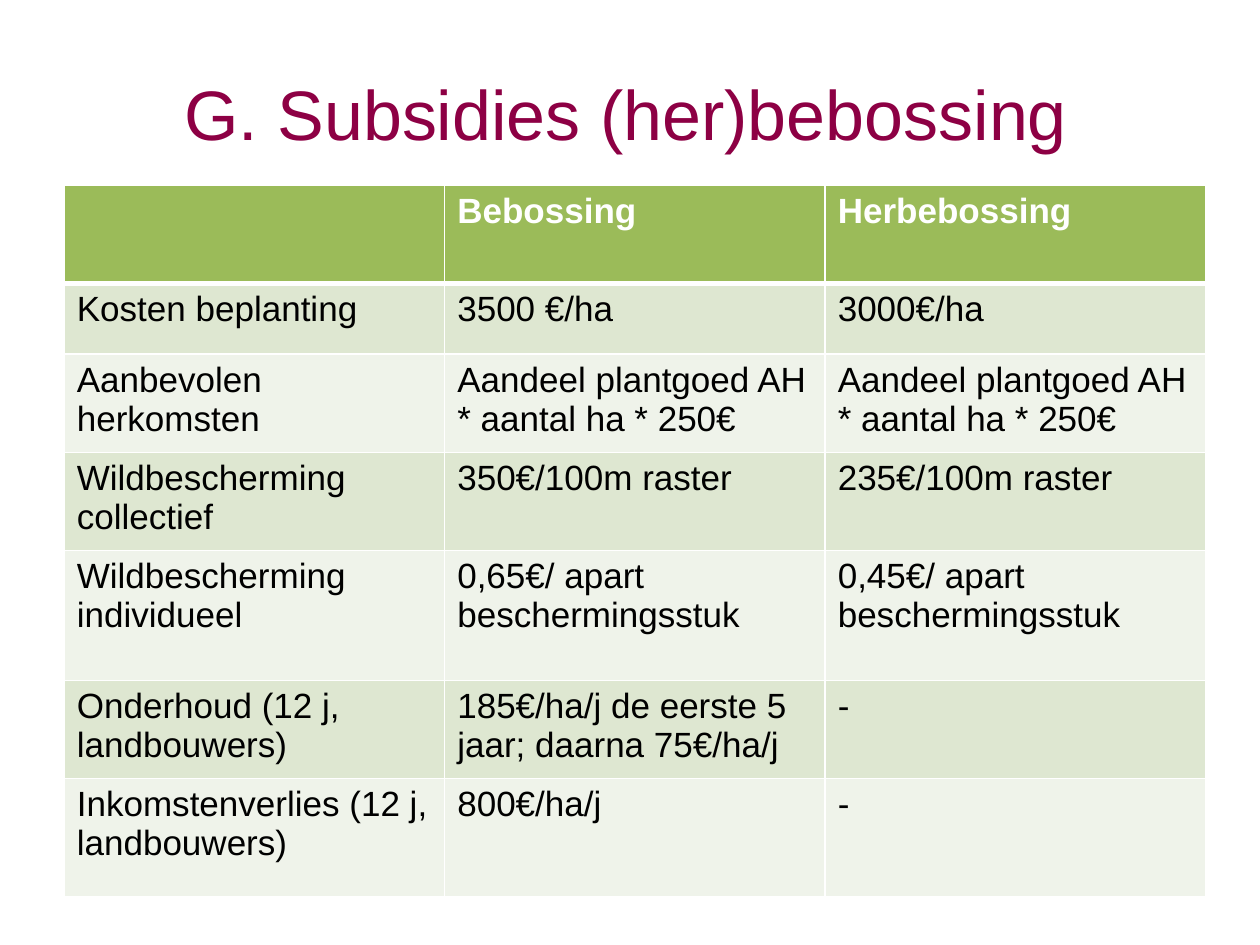
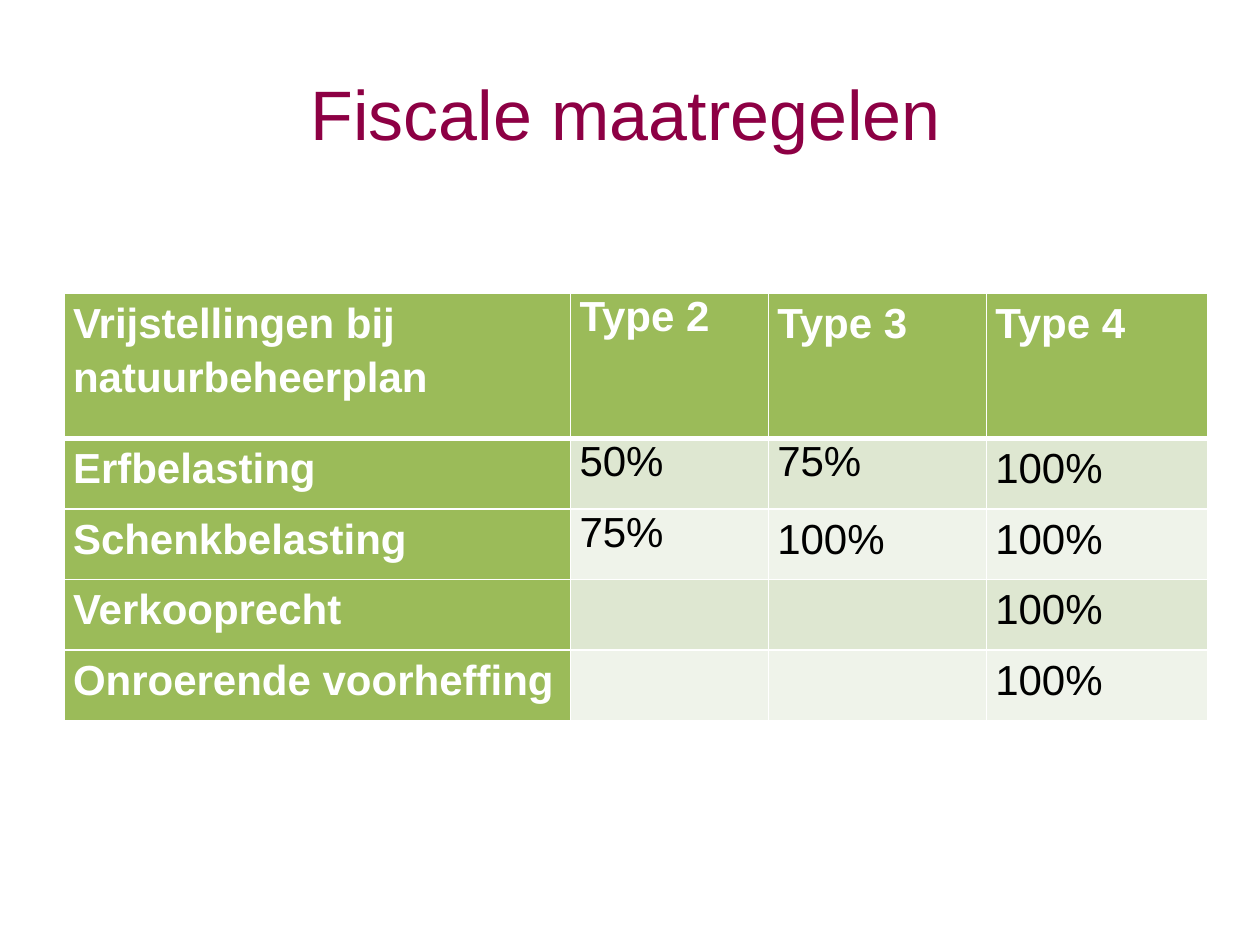
from lxml import etree
from pptx import Presentation
from pptx.dml.color import RGBColor
from pptx.enum.text import MSO_ANCHOR, PP_ALIGN
from pptx.oxml.ns import qn
from pptx.util import Inches, Pt

CENTER = PP_ALIGN.CENTER
MIDDLE = MSO_ANCHOR.MIDDLE
PLUM = RGBColor(0x8D, 0x00, 0x44)
GREEN = RGBColor(0x9B, 0xBB, 0x59)
BAND_DARK = RGBColor(0xDE, 0xE7, 0xD1)
BAND_LIGHT = RGBColor(0xEF, 0xF3, 0xEA)
WHITE = RGBColor(0xFF, 0xFF, 0xFF)
BLACK = RGBColor(0x00, 0x00, 0x00)
FONT = "Arial"
GRID_COLUMNS = 100

SUBSIDIES = [
    ["", "Bebossing", "Herbebossing"],
    ["Kosten beplanting", "3500 €/ha", "3000€/ha"],
    ["Aanbevolen herkomsten"] + ["Aandeel plantgoed AH * aantal ha * 250€"] * 2,
    ["Wildbescherming collectief", "350€/100m raster", "235€/100m raster"],
    ["Wildbescherming individueel", "0,65€/ apart beschermingsstuk",
     "0,45€/ apart beschermingsstuk"],
    ["Onderhoud (12 j, landbouwers)",
     "185€/ha/j de eerste 5 jaar; daarna 75€/ha/j", "-"],
    ["Inkomstenverlies (12 j, landbouwers)", "800€/ha/j", "-"],
]
EXEMPTIONS = [
    ["Vrijstellingen bij natuurbeheerplan", "Type 2", "Type 3", "Type 4"],
    ["Erfbelasting", "50%", "75%", "100%"],
    ["Schenkbelasting", "75%", "100%", "100%"],
    ["Verkooprecht", "", "", "100%"],
    ["Onroerende voorheffing", "", "", "100%"],
]
SINGLE_SPACED = {(0, 1), (1, 1), (1, 2), (2, 1)}


class Deck:
    """Holds the style, the grid and the current slide."""

    def __init__(self):
        self.prs = Presentation()
        self.prs.slide_width, self.prs.slide_height = Inches(10), Inches(7.5)
        self.unit = self.prs.slide_width / GRID_COLUMNS

    def span(self, units):
        return round(units * self.unit)

    def style(self, p, size, color, bold=False):
        for r in p.runs:
            r.font.name, r.font.size, r.font.bold = FONT, Pt(size), bold
            r.font.color.rgb = color

    def new_slide(self, title):
        self.slide = self.prs.slides.add_slide(self.prs.slide_layouts[6])
        sp = self.slide.shapes.add_textbox(*map(self.span, (4.3, 2.8, 90.7, 12.3)))
        tf = sp.text_frame
        tf.word_wrap = True
        tf.vertical_anchor = MIDDLE
        tf.text = title
        p = tf.paragraphs[0]
        p.alignment = CENTER
        self.style(p, 40, PLUM)

    def borders(self, cell, row):
        tc_pr = cell._tc.get_or_add_tcPr()
        top = 3 if row == 1 else 1
        bottom = 3 if row == 0 else 1
        for side, width in (("L", 1), ("R", 1), ("T", top), ("B", bottom)):
            ln = etree.SubElement(tc_pr, qn(f"a:ln{side}"), w=str(Pt(width)))
            fill = etree.SubElement(ln, qn("a:solidFill"))
            etree.SubElement(fill, qn("a:srgbClr"), val=str(WHITE))

    def table(self, texts, top, widths, heights, size,
              head_column=False, compact=False, spacing=None, single=()):
        box = map(self.span, (5.1, top, sum(widths), sum(heights)))
        table = self.slide.shapes.add_table(len(heights), len(widths), *box).table
        table.first_row = table.horz_banding = False
        for column, width in zip(table.columns, widths):
            column.width = self.span(width)
        for row, height in zip(table.rows, heights):
            row.height = self.span(height)
        for i, line in enumerate(texts):
            for j, text in enumerate(line):
                cell = table.cell(i, j)
                head = i == 0 or (head_column and j == 0)
                self.borders(cell, i)
                cell.fill.solid()
                band = BAND_DARK if i % 2 else BAND_LIGHT
                cell.fill.fore_color.rgb = GREEN if head else band
                if not text:
                    continue
                if compact:
                    cell.margin_left = cell.margin_right = self.span(0.7)
                    cell.margin_top = cell.margin_bottom = 0
                cell.text_frame.text = text
                p = cell.text_frame.paragraphs[0]
                if spacing and (i, j) not in single:
                    p.line_spacing = spacing
                self.style(p, size, WHITE if head else BLACK, head)


def main():
    deck = Deck()
    deck.new_slide("G. Subsidies (her)bebossing")
    deck.table(SUBSIDIES, 14.7, [30.2] * 3,
               [7.8, 5.6, 7.8, 7.8, 10.3, 7.8, 9.4], 20)
    deck.new_slide("Fiscale maatregelen")
    deck.table(EXEMPTIONS, 23.3, [40.2, 15.7, 17.3, 17.6], [11.5] + [5.6] * 4, 24,
               head_column=True, compact=True, spacing=1.15, single=SINGLE_SPACED)
    deck.prs.save("out.pptx")


if __name__ == "__main__":
    main()
